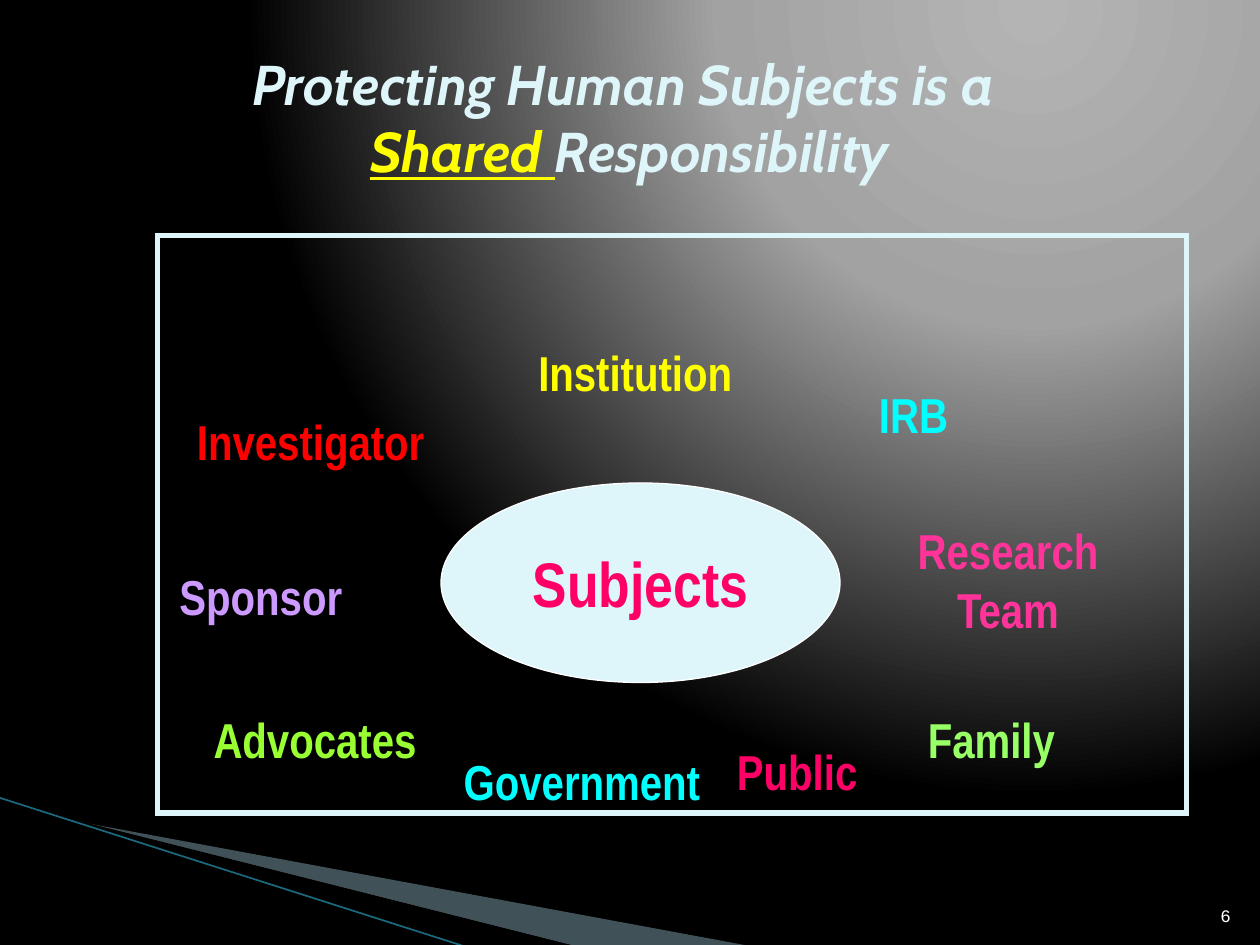
from dataclasses import dataclass

from lxml import etree
from pptx import Presentation
from pptx.dml import color
from pptx.enum import shapes, text
from pptx.oxml import ns
from pptx.util import Pt


@dataclass(frozen=True)
class Theme:
    """Colours, fonts and type sizes of the slide."""
    ice: str = "DEF5FA"
    white: str = "FFFFFF"
    black: str = "000000"
    yellow: str = "FFFF00"
    cyan: str = "00FFFF"
    rose: str = "FF0066"
    swoosh: str = "A0CBDC"
    swoosh_line: str = "1B6A7E"
    glow: tuple = ((0, "B4B4B4"), (40, "A2A2A2"), (100, "000000"))
    title_font: str = "Cabin"
    body_font: str = "Arial Narrow"
    number_font: str = "Courier New"
    title_size: int = 32
    hub_size: int = 36
    party_size: int = 28
    number_size: int = 10


THEME = Theme()

PARTIES = [
    ("Institution", THEME.yellow, (288, 192, 150, 41), True),
    ("IRB", THEME.cyan, (480, 216, 84, 41), True),
    ("Research Team", "FF3399", (504, 294, 144, 74), True),
    ("Family", "99FF66", (516, 402, 101, 41), True),
    ("Public", THEME.rose, (412, 420, 87, 41), False),
    ("Government", THEME.cyan, (256, 426, 153, 41), False),
    ("Advocates", "99FF33", (108, 402, 144, 41), True),
    ("Sponsor", "CC99FF", (92, 320, 114, 41), False),
    ("Investigator", "FF0000", (103, 231.5, 149, 41), False),
]


def rgb(code):
    """Return the colour for a hex code."""
    return color.RGBColor.from_string(code)


def points(box):
    """Convert a box of numbers to lengths in points."""
    return [Pt(length) for length in box]


def add_run(paragraph, words, font, size, ink, bold=True, italic=False, underline=False):
    """Append one styled run to a paragraph."""
    run = paragraph.add_run()
    run.text = words
    run.font.name, run.font.size = font, Pt(size)
    run.font.bold, run.font.italic, run.font.underline = bold, italic, underline
    run.font.color.rgb = rgb(ink)


def add_label(slide, box, anchor=text.MSO_ANCHOR.TOP, align=text.PP_ALIGN.CENTER,
              wrap=True, fit=text.MSO_AUTO_SIZE.NONE):
    """Add an empty text box and return its paragraph."""
    frame = slide.shapes.add_textbox(*points(box)).text_frame
    frame.word_wrap = wrap
    frame.auto_size = fit
    frame.vertical_anchor = anchor
    frame.paragraphs[0].alignment = align
    return frame.paragraphs[0]


def paint_background(slide):
    """Fill the background with a glow from the upper right."""
    slide.background.fill.gradient()
    gradient = slide.element.find(".//" + ns.qn("a:gradFill"))
    for child in list(gradient):
        gradient.remove(child)
    stops = etree.SubElement(gradient, ns.qn("a:gsLst"))
    for position, code in THEME.glow:
        stop = etree.SubElement(stops, ns.qn("a:gs"), pos=str(position * 1000))
        etree.SubElement(stop, ns.qn("a:srgbClr"), val=code)
    route = etree.SubElement(gradient, ns.qn("a:path"), path="circle")
    etree.SubElement(route, ns.qn("a:fillToRect"), l="65000", t="0", r="0", b="98000")


def add_wedge(slide, left, top, corners, ink, opacity=100):
    """Draw a filled outline with corners relative to its left and top."""
    outline = [(Pt(left + x), Pt(top + y)) for x, y in corners]
    builder = slide.shapes.build_freeform(*outline[0], scale=1.0)
    builder.add_line_segments(outline[1:])
    wedge = builder.convert_to_shape()
    wedge.shadow.inherit = False
    wedge.fill.solid()
    wedge.fill.fore_color.rgb = rgb(ink)
    wedge.line.fill.background()
    tint = wedge.element.spPr.find(".//" + ns.qn("a:srgbClr"))
    etree.SubElement(tint, ns.qn("a:alpha"), val=str(opacity * 1000))


def add_swoosh(slide, box):
    """Draw the wedges and thin line in the lower left corner."""
    left, top, width, height = box
    add_wedge(slide, left + 40, top + 12,
              [(0, 0.72), (388.8, 72.72), (288.72, 72.72), (0, 0)], THEME.swoosh, 40)
    add_wedge(slide, left + 38.5, top + 11.5,
              [(0, 0), (290.9, 73.4), (229.7, 74), (0.7, 0.7)], THEME.black)
    edge = slide.shapes.add_connector(
        shapes.MSO_CONNECTOR.STRAIGHT, *points((left, top, left + width, top + height)))
    edge.line.color.rgb = rgb(THEME.swoosh_line)
    edge.line.width = Pt(0.95)
    etree.SubElement(edge.element.spPr, ns.qn("a:effectLst"))


def add_title(slide, box):
    """Write the two-line title."""
    heading = add_label(slide, box, text.MSO_ANCHOR.MIDDLE)
    style = dict(font=THEME.title_font, size=THEME.title_size, italic=True)
    add_run(heading, "Protecting Human Subjects is a ", ink=THEME.ice, **style)
    heading.add_line_break()
    add_run(heading, "Shared ", ink=THEME.yellow, underline=True, **style)
    add_run(heading, "Responsibility", ink=THEME.ice, **style)


def add_frame(slide, box):
    """Draw the square-cornered outline around the diagram."""
    border = slide.shapes.add_shape(shapes.MSO_SHAPE.RECTANGLE, *points(box))
    border.shadow.inherit = False
    border.fill.background()
    border.line.color.rgb = rgb(THEME.ice)
    border.line.width = Pt(3)
    stroke = border.element.spPr.find(ns.qn("a:ln"))
    etree.SubElement(stroke, ns.qn("a:miter"), lim="800000")


def add_hub(slide, box):
    """Draw the central ellipse with its label."""
    hub = slide.shapes.add_shape(shapes.MSO_SHAPE.OVAL, *points(box))
    hub.shadow.inherit = False
    hub.fill.solid()
    hub.fill.fore_color.rgb = rgb(THEME.ice)
    hub.line.color.rgb = rgb(THEME.white)
    hub.line.width = Pt(0.75)
    hub.text_frame.word_wrap = False
    hub.text_frame.vertical_anchor = text.MSO_ANCHOR.MIDDLE
    caption = hub.text_frame.paragraphs[0]
    caption.alignment = text.PP_ALIGN.CENTER
    add_run(caption, "Subjects", THEME.body_font, THEME.hub_size, THEME.rose)


def add_party(slide, box, name, ink, wrap):
    """Write the name of one responsible party."""
    label = add_label(slide, box, wrap=wrap, fit=text.MSO_AUTO_SIZE.SHAPE_TO_FIT_TEXT)
    add_run(label, name, THEME.body_font, THEME.party_size, ink)


def add_number(slide, box):
    """Write the slide number."""
    number = add_label(slide, box, text.MSO_ANCHOR.BOTTOM, text.PP_ALIGN.RIGHT)
    add_run(number, "6", THEME.number_font, THEME.number_size, THEME.white, bold=False)


def main():
    """Build and save the slide."""
    deck = Presentation()
    deck.slide_width, deck.slide_height = Pt(720), Pt(540)
    slide = deck.slides.add_slide(deck.slide_layouts[6])
    paint_background(slide)
    add_swoosh(slide, (-0.5, 455.8, 267.5, 85.5))
    add_number(slide, (675, 504, 35.5, 28.8))
    add_title(slide, (36, 21.6, 648, 90))
    add_frame(slide, (90, 134.6, 588, 330))
    add_hub(slide, (252, 276, 228, 114))
    for name, ink, box, wrap in PARTIES:
        add_party(slide, box, name, ink, wrap)
    deck.save("out.pptx")


if __name__ == "__main__":
    main()
